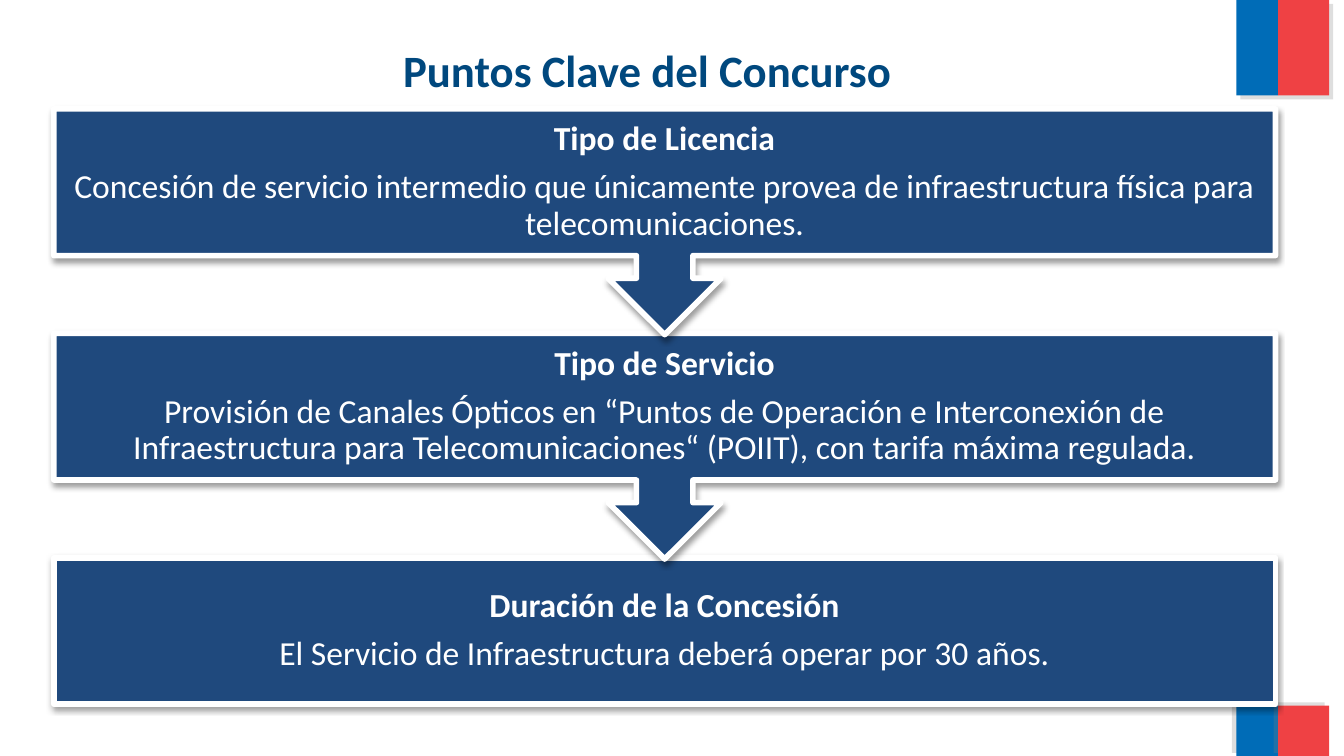
from lxml.etree import SubElement
from pptx import Presentation
from pptx.dml.color import RGBColor
from pptx.enum.shapes import MSO_SHAPE
from pptx.enum.text import MSO_ANCHOR, PP_ALIGN
from pptx.oxml.ns import qn
from pptx.util import Emu, Pt

PX = 4572
THEME = {
    "navy": "1F497D",
    "title": "00487E",
    "white": "FFFFFF",
    "blue": "006CB7",
    "red": "EF4144",
    "font": "Calibri",
    "title_size": 24,
    "body_size": 18,
}


def add_block(kind, box, color, shadow, outline=None):
    block = slide.shapes.add_shape(kind, *[Emu(v * PX) for v in box])
    block.shadow.inherit = False
    block.fill.solid()
    block.fill.fore_color.rgb = RGBColor.from_string(THEME[color])
    if outline:
        block.line.color.rgb = RGBColor.from_string(THEME[outline])
        block.line.width = Pt(3)
    else:
        block.line.fill.background()
    if shadow:
        shade, alpha, blur, distance, angle = shadow
        effects = block._element.spPr.find(qn("a:effectLst"))
        outer = SubElement(effects, qn("a:outerShdw"), blurRad=str(Pt(blur)),
                           dist=str(Pt(distance)), dir=str(angle * 60000),
                           algn="ctr", rotWithShape="0")
        tint = SubElement(outer, qn("a:srgbClr"), val=shade)
        SubElement(tint, qn("a:alpha"), val=str(alpha * 1000))
    return block


def write_lines(frame, lines, size, color, frame_format, line_format):
    for name, value in frame_format.items():
        setattr(frame, name, value)
    for index, (words, bold) in enumerate(lines):
        line = frame.add_paragraph() if index else frame.paragraphs[0]
        for name, value in line_format.items():
            setattr(line, name, value)
        run = line.add_run()
        run.text = words
        font_format = {"name": THEME["font"], "size": Pt(THEME[size]), "bold": bold}
        for name, value in font_format.items():
            setattr(run.font, name, value)
        run.font.color.rgb = RGBColor.from_string(THEME[color])


deck = Presentation()
deck.slide_width = Emu(2000 * PX)
deck.slide_height = Emu(1125 * PX)
slide = deck.slides.add_slide(deck.slide_layouts[6])

for top, height, angle in [(0, 142, 45), (1050, 75, 215)]:
    for left, width, color in [(1840, 62, "blue"), (1902, 76, "red")]:
        add_block(MSO_SHAPE.RECTANGLE, (left, top, width, height), color,
                  ("808080", 25, 0, 3, angle))

key_points = [
    ("Tipo de Licencia",
     "Concesión de servicio intermedio que únicamente provea de infraestructura "
     "física para telecomunicaciones."),
    ("Tipo de Servicio",
     "Provisión de Canales Ópticos en “Puntos de Operación e Interconexión de "
     "Infraestructura para Telecomunicaciones“ (POIIT), con tarifa máxima regulada."),
    ("Duración de la Concesión",
     "El Servicio de Infraestructura deberá operar por 30 años."),
]
LEFT, TOP, WIDTH, PITCH = 80, 162, 1818, 334
BODY_HEIGHT, CALLOUT_HEIGHT = 218, 336
point_frame = {"word_wrap": True, "vertical_anchor": MSO_ANCHOR.MIDDLE}
for side in ("left", "right", "top", "bottom"):
    point_frame["margin_" + side] = Emu(28 * PX)
point_line = {"alignment": PP_ALIGN.CENTER, "line_spacing": 0.9, "space_after": Pt(6.3)}

last = len(key_points) - 1
for step in range(last, -1, -1):
    heading, detail = key_points[step]
    top = TOP + step * PITCH
    if step == last:
        kind, height, turn = MSO_SHAPE.RECTANGLE, BODY_HEIGHT, 0
    else:
        kind, height, turn = MSO_SHAPE.UP_ARROW_CALLOUT, CALLOUT_HEIGHT, 180
    panel = add_block(kind, (LEFT, top, WIDTH, height), "navy",
                      ("000000", 38, 3.1, 1.6, 90), "white")
    panel.rotation = turn
    caption = slide.shapes.add_textbox(
        *[Emu(v * PX) for v in (LEFT, top, WIDTH, BODY_HEIGHT)])
    write_lines(caption.text_frame, [(heading, True), (detail, False)],
                "body_size", "white", point_frame, point_line)

title = add_block(MSO_SHAPE.RECTANGLE, (118, 54, 1690, 100), "white", None)
write_lines(title.text_frame, [("Puntos Clave del Concurso", True)],
            "title_size", "title",
            {"word_wrap": True, "vertical_anchor": MSO_ANCHOR.MIDDLE},
            {"alignment": PP_ALIGN.CENTER})

deck.save("out.pptx")
